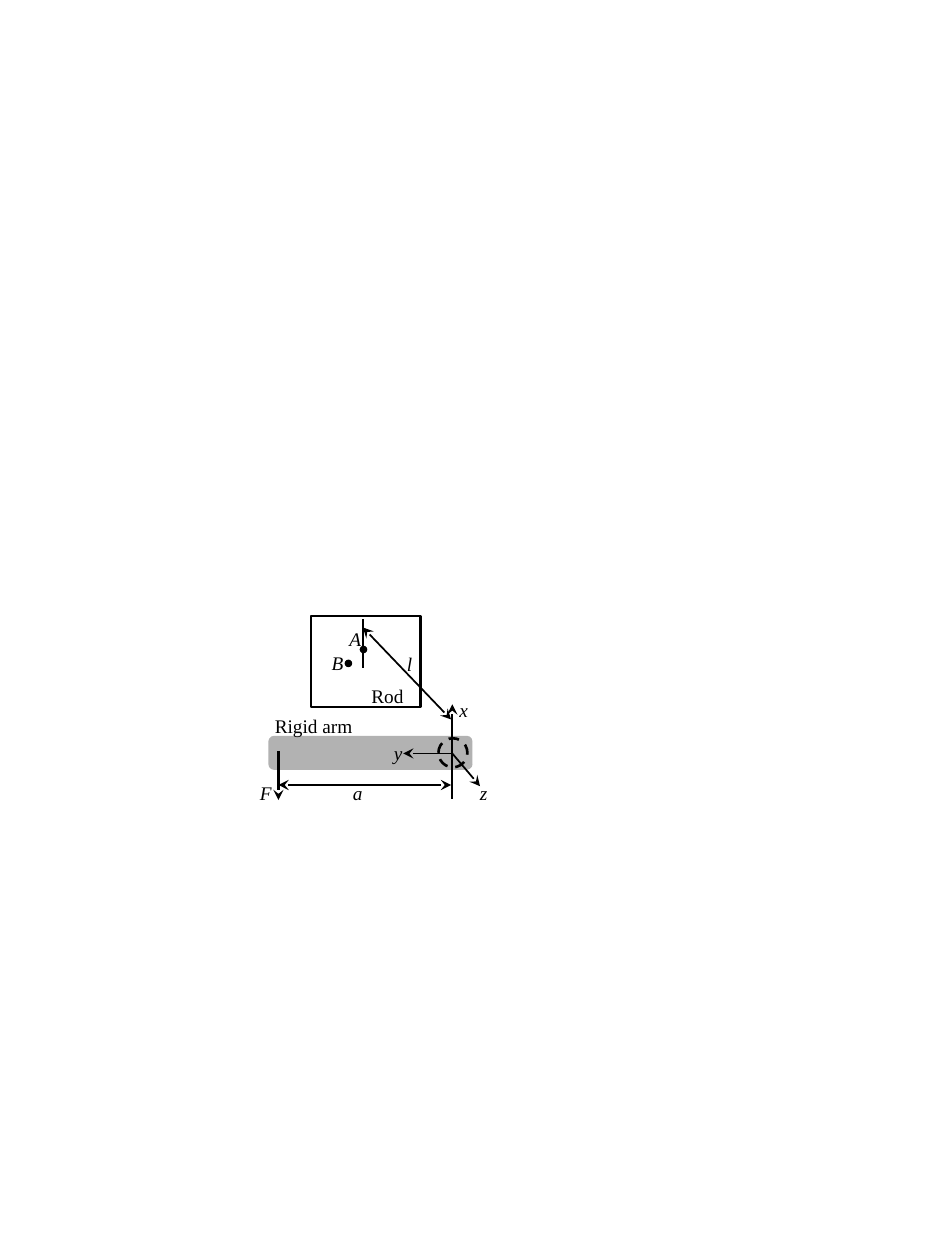
"""Draw a rod with a rigid arm, its load and its coordinate axes."""
from lxml.etree import SubElement
from pptx import Presentation
from pptx.dml.color import RGBColor
from pptx.enum.dml import MSO_LINE as DASH
from pptx.enum.shapes import MSO_CONNECTOR as CON, MSO_SHAPE as SHP
from pptx.enum.text import PP_ALIGN as ALIGN
from pptx.oxml.ns import qn
from pptx.util import Inches, Pt

COLS, ROWS = 750, 1000
CELL = Inches(0.01)
BLACK, GRAY = "000000", "B2B2B2"
FONT = {"name": "Times New Roman", "size": Pt(11)}
ORIGIN = (359, 598)
LOAD_X, ROD_X, SPAN_Y = 221, 288, 623
DOT, LABEL_W, LABEL_H = 5, 16, 17

ROD_AXIS = ((ROD_X, 530), (ROD_X, 491), 1, ())
SHAPES = [
    (SHP.RECTANGLE, (247, 489, 87, 72), None, 1.5, None),
    (SHP.FLOWCHART_ALTERNATE_PROCESS, (213, 584, 162, 27), GRAY, None, None),
    (SHP.OVAL, (348, 586, 23, 23), None, 1.5, DASH.DASH),
]
LINES = [
    (ORIGIN, (320, 598), 1, ("tail",)),
    (ORIGIN, (359, 559), 1, ("tail",)),
    (ORIGIN, (381, 624), 1, ("tail",)),
    ((LOAD_X, 596), (LOAD_X, 635), 1.5, ("tail",)),
    ((359, 634), (359, 595), 1, ()),
    ((LOAD_X, SPAN_Y), (358, SPAN_Y), 1, ("head", "tail")),
    ((358, 571), (ROD_X, 498), 1, ("head", "tail")),
]
DOTS = [(286, 513), (274, 524)]
NAMES = [("Rigid arm", 216, 567, 66), ("Rod", 291, 543, 33)]
SYMBOLS = [
    ("F", 203, 620), ("a", 276, 620), ("z", 376, 620), ("y", 308, 588),
    ("x", 360, 554), ("l", 317, 518), ("A", 274, 498), ("B", 260, 517),
]


def cells(*counts):
    return [n * CELL for n in counts]


def color(value):
    return RGBColor.from_string(value)


def add_line(s, start, end, width, ends):
    cx = s.shapes.add_connector(CON.STRAIGHT, *cells(*start, *end))
    cx.line.color.rgb = color(BLACK)
    cx.line.width = Pt(width)
    for end_name in ends:
        SubElement(cx.line._get_or_add_ln(), qn(f"a:{end_name}End"), type="stealth")
    SubElement(cx._element.spPr, qn("a:effectLst"))


def add_shape(s, kind, box, fill, width, dash):
    sp = s.shapes.add_shape(kind, *cells(*box))
    sp.shadow.inherit = False
    if fill:
        sp.fill.solid()
        sp.fill.fore_color.rgb = color(fill)
    else:
        sp.fill.background()
    if width:
        sp.line.color.rgb = color(BLACK)
        sp.line.width = Pt(width)
        sp.line.dash_style = dash
    else:
        sp.line.fill.background()


def add_label(s, text, x, y, width=LABEL_W, italic=True):
    tf = s.shapes.add_textbox(*cells(x, y, width, LABEL_H)).text_frame
    tf.word_wrap = True
    for side in ("left", "top", "right", "bottom"):
        setattr(tf, f"margin_{side}", 0)
    p = tf.paragraphs[0]
    p.alignment = ALIGN.CENTER
    r = p.add_run()
    r.text = text
    for key, value in {**FONT, "italic": italic}.items():
        setattr(r.font, key, value)
    r.font.color.rgb = color(BLACK)


def main():
    prs = Presentation()
    prs.slide_width, prs.slide_height = cells(COLS, ROWS)
    s = prs.slides.add_slide(prs.slide_layouts[6])
    add_line(s, *ROD_AXIS)
    for item in SHAPES:
        add_shape(s, *item)
    for item in LINES:
        add_line(s, *item)
    for item in NAMES:
        add_label(s, *item, italic=False)
    for x, y in DOTS:
        add_shape(s, SHP.OVAL, (x, y, DOT, DOT), BLACK, 0.75, None)
    for item in SYMBOLS:
        add_label(s, *item)
    prs.save("out.pptx")


if __name__ == "__main__":
    main()
